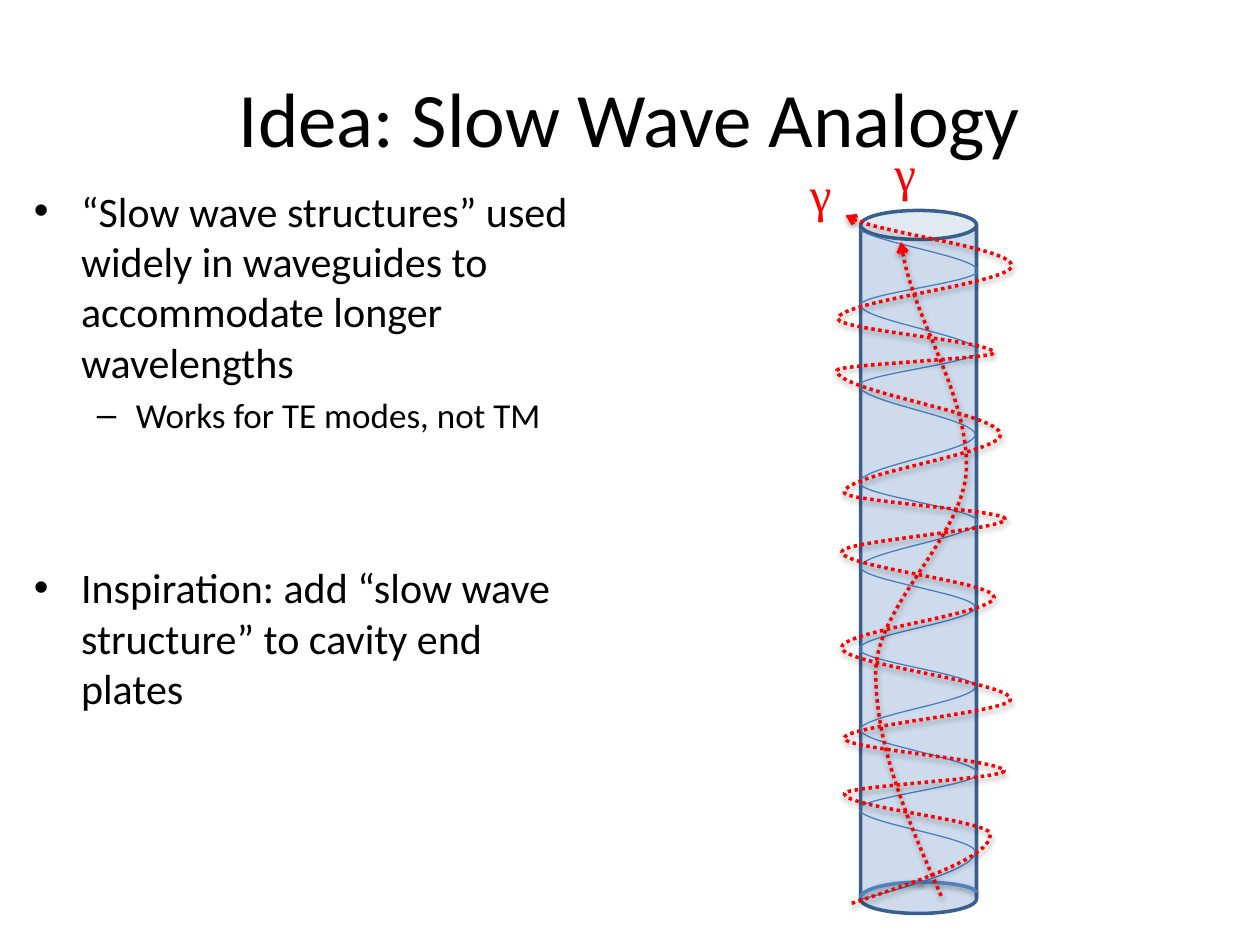
import pptx
import pptx.dml.color
import pptx.enum.dml
import pptx.enum.shapes
import pptx.enum.text
import pptx.oxml
import pptx.oxml.ns
import pptx.util

THEME = {
    "ink": "000000", "ray": "FF0000", "tube": "4F81BD",
    "edge": "3A5F8C", "coil": "4B7EBC",
    "sans": "Calibri", "serif": "Times New Roman",
    "title": 44, "body": 24, "sub": 20, "gamma": 28,
    "thick": 2, "thin": 0.75,
}
NS = pptx.oxml.ns.nsdecls("a")
SHAPE = pptx.enum.shapes.MSO_SHAPE
ALIGN = pptx.enum.text.PP_ALIGN
Pt = pptx.util.Pt
qn = pptx.oxml.ns.qn

deck = pptx.Presentation()
deck.slide_width = pptx.util.Inches(10)
deck.slide_height = pptx.util.Inches(7.5)
cell = deck.slide_width // 1000  # square grid: 1000 columns, 750 rows
slide = deck.slides.add_slide(deck.slide_layouts[5])
shapes = slide.shapes


def write(para, text, size, font=THEME["sans"], color=THEME["ink"],
          align=ALIGN.LEFT, before=0, bullet=None, indent=0, hang=0):
    run = para.add_run()
    run.text = text
    run.font.size = Pt(size)
    run.font.name = font
    run.font.color.rgb = pptx.dml.color.RGBColor.from_string(color)
    para.alignment = align
    para.space_before = Pt(before)
    if bullet:
        props = para._p.get_or_add_pPr()
        props.set("marL", str(int(indent * cell)))
        props.set("indent", str(int(-hang * cell)))
        props.append(pptx.oxml.parse_xml(f'<a:buFont {NS} typeface="Arial"/>'))
        props.append(pptx.oxml.parse_xml(f'<a:buChar {NS} char="{bullet}"/>'))


def stroke(shape, color, width, arrow=False, shadow=False):
    """Outline a shape; an arrow is dotted and has a head at its end."""
    shape.line.color.rgb = pptx.dml.color.RGBColor.from_string(color)
    shape.line.width = Pt(width)
    shape.shadow.inherit = False
    if arrow:
        shape.line.dash_style = pptx.enum.dml.MSO_LINE.ROUND_DOT
        shape.line._get_or_add_ln().append(
            pptx.oxml.parse_xml(f'<a:tailEnd {NS} type="arrow"/>'))
    if shadow:
        shape._element.spPr.find(qn("a:effectLst")).append(
            pptx.oxml.parse_xml(
                f'<a:outerShdw {NS} blurRad="40000" dist="20000" dir="5400000" '
                'rotWithShape="0"><a:srgbClr val="000000">'
                '<a:alpha val="38000"/></a:srgbClr></a:outerShdw>'))


# Title
title = shapes.title
title.left, title.top, title.width, title.height = [
    n * cell for n in (50, 30, 900, 125)]
title.text_frame.vertical_anchor = pptx.enum.text.MSO_ANCHOR.MIDDLE
write(title.text_frame.paragraphs[0], "Idea: Slow Wave Analogy",
      THEME["title"], align=ALIGN.CENTER)

# Bullets
body = shapes.add_textbox(*[n * cell for n in (17, 142, 458, 528)]).text_frame
body.word_wrap = True
top = dict(size=THEME["body"], bullet="•", indent=37.5, hang=37.5)
write(body.paragraphs[0], "“Slow wave structures” used widely in waveguides "
      "to accommodate longer wavelengths", before=4.8, **top)
write(body.add_paragraph(), "Works for TE modes, not TM", THEME["sub"],
      before=4, bullet="–", indent=81, hang=31)
write(body.add_paragraph(), "Inspiration: add “slow wave structure” to "
      "cavity end plates", before=72, **top)

# Tube
tube = shapes.add_shape(SHAPE.CAN, *[n * cell for n in (683, 167, 92, 558)])
tube.fill.solid()
tube.fill.fore_color.rgb = pptx.dml.color.RGBColor.from_string(THEME["tube"])
tint = tube._element.spPr.find(".//" + qn("a:srgbClr"))
tint.append(pptx.oxml.parse_xml(f'<a:alpha {NS} val="28000"/>'))
stroke(tube, THEME["edge"], THEME["thick"])

# Waves: start, turning points and end, from the bottom up
coil = [(683, 714), (774, 676), (682, 642), (776, 614), (683, 579), (774, 545),
        (682, 515), (774, 482), (683, 450), (776, 414), (682, 383), (774, 345),
        (682, 306), (776, 279), (683, 242), (776, 215), (682, 182)]
ray = [(747, 711), (695, 534), (767, 370), (715, 192)]
slow = [(676, 717), (786, 662), (670, 630), (797, 612), (670, 586), (802, 555),
        (668, 514), (789, 474), (668, 438), (798, 412), (670, 391), (794, 345),
        (664, 294), (789, 280), (665, 253), (803, 211), (671, 171)]

for turns, color, width, arrow in (
        (coil, THEME["coil"], THEME["thin"], False),
        (ray, THEME["ray"], THEME["thick"], True),
        (slow, THEME["ray"], THEME["thick"], True)):
    dots = [(x * cell, y * cell) for x, y in turns]
    draft = shapes.build_freeform(*dots[0])
    draft.add_line_segments(dots[1:], close=False)
    wave = draft.convert_to_shape()
    # Bend each leg: upright at the turns, slanted at the two free ends
    legs = wave._element.findall(".//" + qn("a:lnTo"))
    left, high = min(x for x, y in dots), min(y for x, y in dots)
    for leg, (xa, ya), (xb, yb) in zip(legs, dots, dots[1:]):
        xc = (xa + xb) / 2 if leg is legs[0] else xa
        xd = xb + 0.15 * (xa - xb) if leg is legs[-1] else xb
        knots = ((xc, ya + (yb - ya) / 3), (xd, yb - (yb - ya) / 3), (xb, yb))
        marks = "".join(f'<a:pt x="{round(x - left)}" y="{round(y - high)}"/>'
                        for x, y in knots)
        leg.getparent().replace(leg, pptx.oxml.parse_xml(
            f"<a:cubicBezTo {NS}>{marks}</a:cubicBezTo>"))
    wave.fill.background()
    stroke(wave, color, width, arrow=arrow, shadow=arrow)
    if turns is coil:  # the hidden rim lies between the coil and the rays
        for box, turn in (((683, 700, 92, 17), 0), ((720, 663, 25, 99), 270)):
            rim = shapes.add_shape(SHAPE.ARC, *[n * cell for n in box])
            rim.rotation = turn
            rim.fill.background()
            stroke(rim, THEME["tube"], THEME["thick"], shadow=True)

# Ray labels
for left, high in ((633, 125), (700, 108)):
    label = shapes.add_textbox(*[n * cell for n in (left, high, 42, 57)])
    label.text_frame.word_wrap = True
    write(label.text_frame.paragraphs[0], "γ", THEME["gamma"],
          font=THEME["serif"], color=THEME["ray"])

deck.save("out.pptx")
